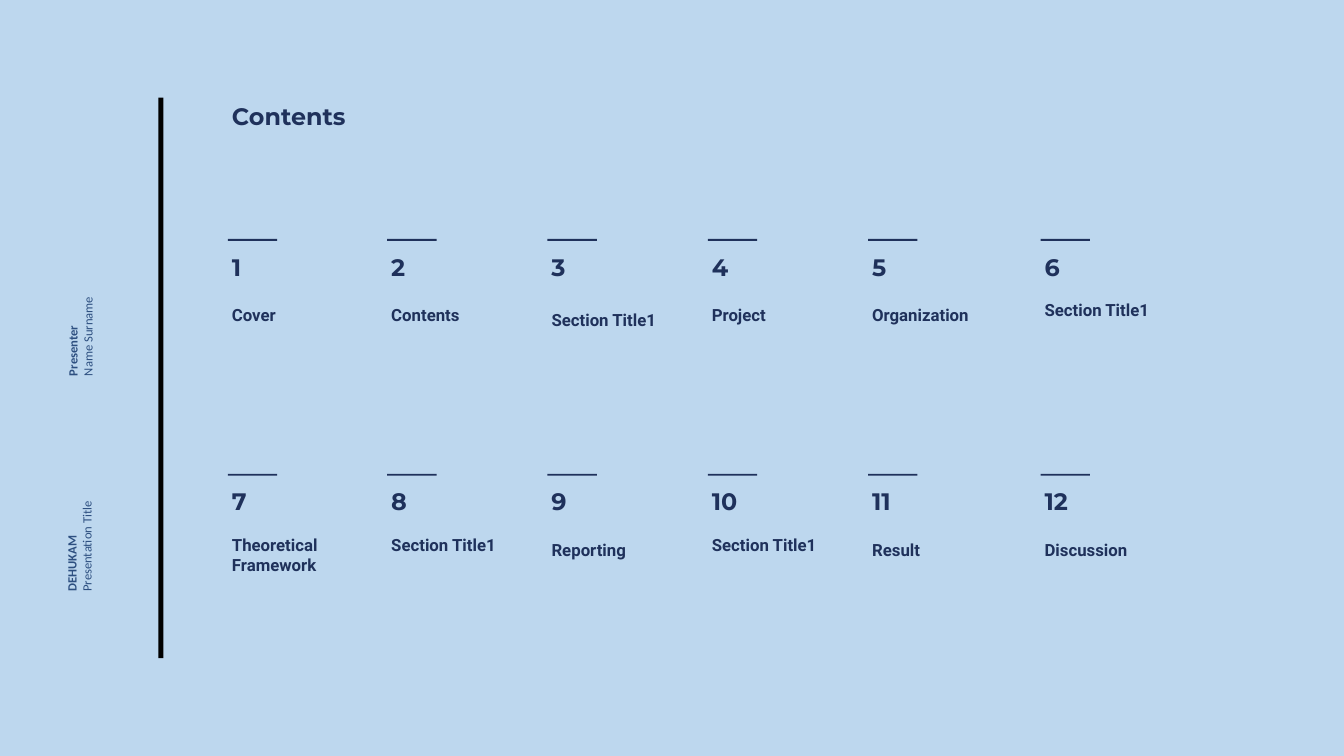
"""Build a contents slide with twelve numbered sections and a rotated side label."""
import pptx
import pptx.util
import pptx.dml.color
import pptx.enum.shapes
import pptx.enum.text

Inches = pptx.util.Inches
NAVY = "1F315B"
SIDE_BLUE = "2D4F80"


def paint(color_format, hex_color):
    color_format.rgb = pptx.dml.color.RGBColor.from_string(hex_color)


def write(holder, lines, font, size, color, spacing=None):
    frame = holder.text_frame
    frame.word_wrap = True
    frame.auto_size = pptx.enum.text.MSO_AUTO_SIZE.NONE
    frame.vertical_anchor = pptx.enum.text.MSO_ANCHOR.MIDDLE
    frame.margin_left = frame.margin_right = Inches(0.04)
    frame.margin_top = frame.margin_bottom = Inches(0.04)
    for index, (text, bold) in enumerate(lines):
        paragraph = frame.add_paragraph() if index else frame.paragraphs[0]
        paragraph.alignment = pptx.enum.text.PP_ALIGN.LEFT
        if spacing:
            paragraph.line_spacing = spacing
        run = paragraph.add_run()
        run.text = text
        run.font.name = font
        run.font.size = pptx.util.Pt(size)
        run.font.bold = bold
        paint(run.font.color, color)


deck = pptx.Presentation()
deck.slide_width = Inches(13.33)
deck.slide_height = Inches(7.5)
slide = deck.slides.add_slide(deck.slide_layouts[5])
slide.background.fill.solid()
paint(slide.background.fill.fore_color, "BDD7EE")

heading = slide.shapes.title
heading.left, heading.top = Inches(2.26), Inches(0.97)
heading.width, heading.height = Inches(2.13), Inches(0.37)
write(heading, [("Contents", True)], "Montserrat", 17, NAVY)

bars = [(1.57, 0.97, 0.05, 5.56, "000000")]

side_labels = [
    (-0.07, 2.72, 1.73, "Presenter", "Name Surname"),
    (0.1, 5.04, 1.37, "DEHUKAM", "Presentation Title"),
]
for left, top, width, role, detail in side_labels:
    side_label = slide.shapes.add_textbox(Inches(left), Inches(top), Inches(width), Inches(0.37))
    side_label.rotation = 270
    write(side_label, [(role, True), (detail, False)], "Calibri", 9, SIDE_BLUE)

column_lefts = [2.26, 3.84, 5.43, 7.02, 8.61, 10.32]
row_tops = [2.37, 4.7]
sections = [
    ("Cover", 0.27, 1.5),
    ("Contents", 0.27, 1.5),
    ("Section Title1", 0.47, None),
    ("Project", 0.27, 1.5),
    ("Organization", 0.27, 1.5),
    ("Section Title1", 0.27, None),
    ("Theoretical Framework", 0.47, None),
    ("Section Title1", 0.27, None),
    ("Reporting", 0.27, 1.5),
    ("Section Title1", 0.27, None),
    ("Result", 0.27, 1.5),
    ("Discussion", 0.27, 1.5),
]
for index, (section, height, spacing) in enumerate(sections):
    row, column = divmod(index, len(column_lefts))
    left, top = column_lefts[column], row_tops[row]
    bars.append((left, top, 0.49, 0.02, NAVY))

    digits = str(index + 1)
    number_width = 0.24 if len(digits) == 1 else 0.34
    number = slide.shapes.add_textbox(
        Inches(left), Inches(top + 0.09), Inches(number_width), Inches(0.37))
    write(number, [(digits, True)], "Montserrat", 17, NAVY)

    section_width = 1.57 if column == 5 or section == "Organization" else 1.45
    section_label = slide.shapes.add_textbox(
        Inches(left), Inches(top + 0.57), Inches(section_width), Inches(height))
    write(section_label, [(section, True)], "Roboto", 12, NAVY, spacing)

for left, top, width, height, color in bars:
    bar = slide.shapes.add_shape(
        pptx.enum.shapes.MSO_SHAPE.RECTANGLE,
        Inches(left), Inches(top), Inches(width), Inches(height))
    bar.shadow.inherit = False
    bar.fill.solid()
    paint(bar.fill.fore_color, color)
    bar.line.fill.background()

deck.save("out.pptx")
